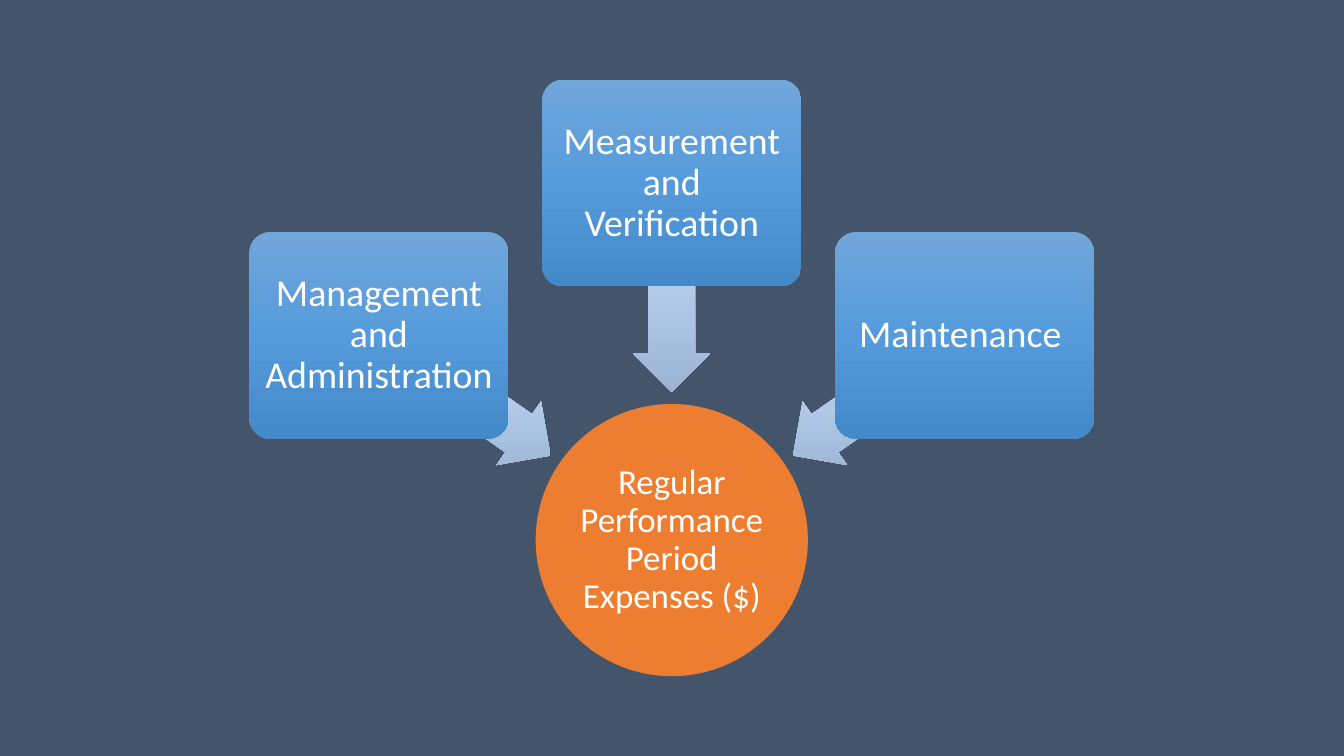
from copy import deepcopy

from pptx import Presentation
from pptx.dml.color import RGBColor
from pptx.enum.shapes import MSO_SHAPE
from pptx.enum.text import MSO_ANCHOR, PP_ALIGN
from pptx.util import Cm, Pt

ELLIPSE = MSO_SHAPE.OVAL
BOX = MSO_SHAPE.ROUNDED_RECTANGLE
ARROW = MSO_SHAPE.LEFT_ARROW
MIDDLE = MSO_ANCHOR.MIDDLE
CENTER = PP_ALIGN.CENTER

COLORS = {
    "background": "44546A",
    "circle": ["ED7D31"],
    "box": ["71A6DB", "559BDB", "448ACA"],
    "arrow": ["C0D2EB", "B3CBE9", "9BB4D3"],
    "text": "FFFFFF",
}
MIDDLE_X = 16.93
BOX_PITCH, ARROW_PITCH = 7.38, 5.21


def add_part(kind, center_x, center_y, width, height, colors):
    """Add a shape around its center, filled with one color or a vertical gradient of three."""
    shape = slide.shapes.add_shape(
        kind, Cm(center_x - width / 2), Cm(center_y - height / 2), Cm(width), Cm(height))
    shape.shadow.inherit = False
    shape.line.fill.background()
    if len(colors) == 1:
        shape.fill.solid()
        shape.fill.fore_color.rgb = RGBColor.from_string(colors[0])
        return shape
    shape.fill.gradient()
    shape.fill.gradient_angle = 270
    gradient = shape.fill._xPr.gradFill
    gradient.set("rotWithShape", "0")
    first_stop = gradient.gsLst[0]
    first_stop.addnext(deepcopy(first_stop))
    for stop, position, color in zip(shape.fill.gradient_stops, (0, 0.5, 1), colors):
        stop.position = position
        stop.color.rgb = RGBColor.from_string(color)
    return shape


def write_label(shape, text, size, margin):
    frame = shape.text_frame
    frame_format = {"word_wrap": True, "vertical_anchor": MIDDLE}
    for side in ("left", "right", "top", "bottom"):
        frame_format[f"margin_{side}"] = Cm(margin)
    for name, value in frame_format.items():
        setattr(frame, name, value)
    paragraph = frame.paragraphs[0]
    paragraph.alignment = CENTER
    paragraph.line_spacing = 0.9
    run = paragraph.add_run()
    run.text = text
    for name, value in {"name": "Calibri", "size": Pt(size)}.items():
        setattr(run.font, name, value)
    run.font.color.rgb = RGBColor.from_string(COLORS["text"])


presentation = Presentation()
presentation.slide_width = Cm(33.87)
presentation.slide_height = Cm(19.05)
slide = presentation.slides.add_slide(presentation.slide_layouts[6])
slide.background.fill.solid()
slide.background.fill.fore_color.rgb = RGBColor.from_string(COLORS["background"])

circle = add_part(ELLIPSE, MIDDLE_X, 13.61, 6.86, 6.86, COLORS["circle"])
write_label(circle, "Regular Performance Period Expenses ($)", 25, 0.05)

# Label, column from the middle, box center, arrow center, arrow rotation
expenses = [
    ("Management and Administration", -1, 8.45, 9.97, 215),
    ("Measurement and Verification", 0, 4.61, 7.25, 270),
    ("Maintenance ", 1, 8.45, 9.97, 325),
]
for label, column, box_y, arrow_y, rotation in expenses:
    arrow = add_part(ARROW, MIDDLE_X + column * ARROW_PITCH, arrow_y, 5.26, 1.96, COLORS["arrow"])
    arrow.adjustments[0] = 0.6
    arrow.adjustments[1] = 0.5
    arrow.rotation = rotation
    box = add_part(BOX, MIDDLE_X + column * BOX_PITCH, box_y, 6.53, 5.21, COLORS["box"])
    box.adjustments[0] = 0.1
    write_label(box, label, 27, 0.14)

presentation.save("out.pptx")
